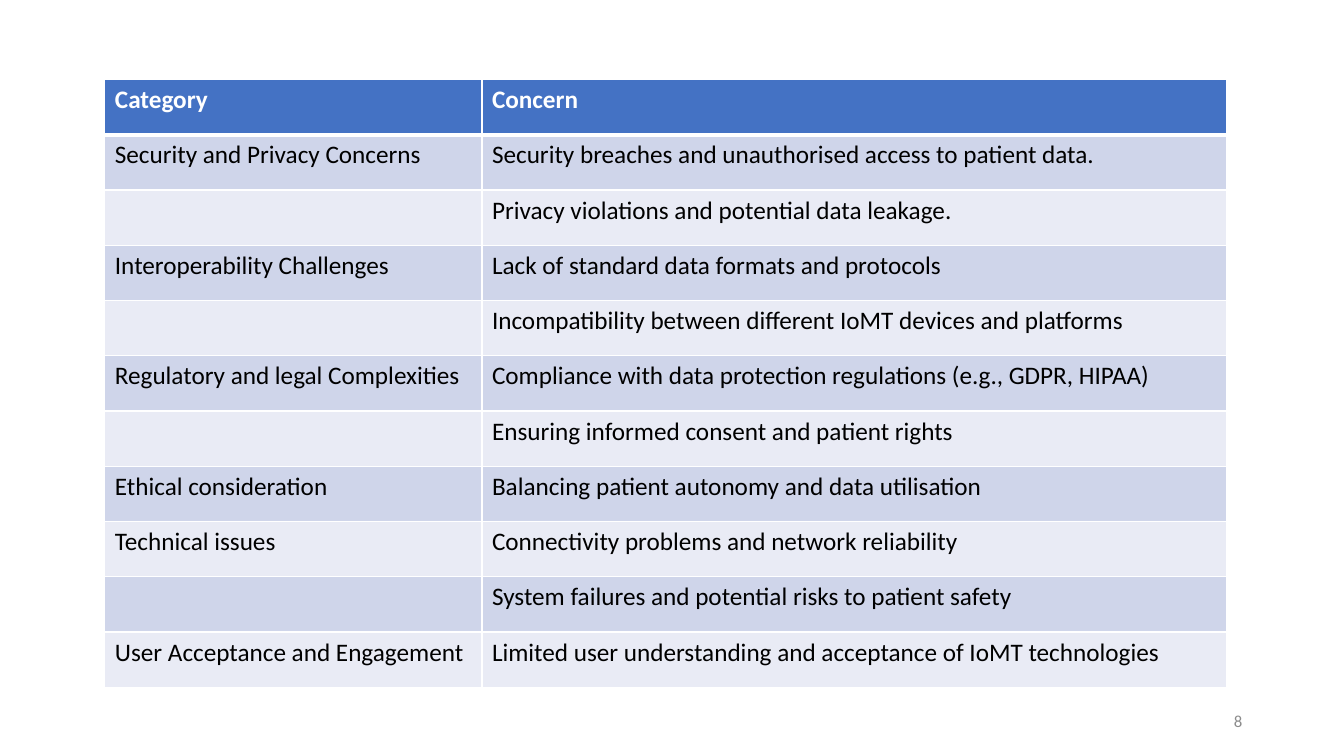
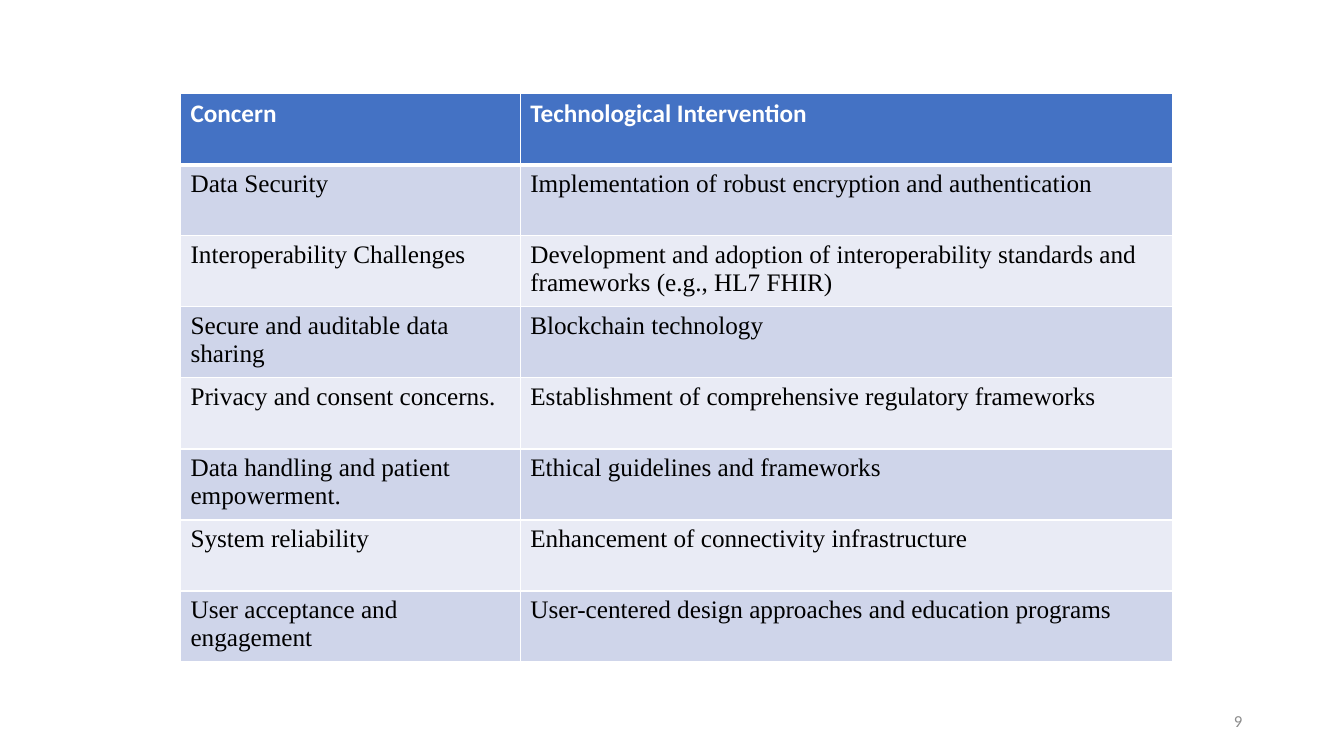
from lxml import etree
from pptx import Presentation
from pptx import util as u
from pptx.dml import color
from pptx.enum import text
from pptx.oxml import ns

SLIDE_WIDTH, SLIDE_HEIGHT = u.Inches(13.33), u.Inches(7.5)
HEADING_FONT = "Calibri"
WHITE, BLACK, GREY = "FFFFFF", "000000", "8C8C8C"
HEADER_FILL = "4472C4"
BAND_FILLS = ("E9EBF5", "CFD5EA")

CONCERNS = [
    ("Category", "Concern"),
    ("Security and Privacy Concerns", "Security breaches and unauthorised access to patient data."),
    ("", "Privacy violations and potential data leakage."),
    ("Interoperability Challenges", "Lack of standard data formats and protocols"),
    ("", "Incompatibility between different IoMT devices and platforms"),
    ("Regulatory and legal Complexities", "Compliance with data protection regulations (e.g., GDPR, HIPAA)"),
    ("", "Ensuring informed consent and patient rights"),
    ("Ethical consideration", "Balancing patient autonomy and data utilisation"),
    ("Technical issues", "Connectivity problems and network reliability"),
    ("", "System failures and potential risks to patient safety"),
    ("User Acceptance and Engagement", "Limited user understanding and acceptance of IoMT technologies"),
]
INTERVENTIONS = [
    ("Concern", "Technological Intervention"),
    ("Data Security", "Implementation of robust encryption and authentication"),
    ("Interoperability Challenges",
     "Development and adoption of interoperability standards and frameworks (e.g., HL7 FHIR)"),
    ("Secure and auditable data sharing", "Blockchain technology"),
    ("Privacy and consent concerns.", "Establishment of comprehensive regulatory frameworks"),
    ("Data handling and patient empowerment.", "Ethical guidelines and frameworks"),
    ("System reliability", "Enhancement of connectivity infrastructure"),
    ("User acceptance and engagement", "User-centered design approaches and education programs"),
]


def across(percent):
    return u.Emu(int(SLIDE_WIDTH * percent / 100))


def down(percent):
    return u.Emu(int(SLIDE_HEIGHT * percent / 100))


def rgb(value):
    return color.RGBColor.from_string(value)


def set_font(para, name, size, fill, bold=False):
    para.font.name = name
    para.font.size = u.Pt(size)
    para.font.bold = bold
    para.font.color.rgb = rgb(fill)


def add_borders(cell, bottom):
    properties = cell._tc.get_or_add_tcPr()
    for side, points in (("L", 1), ("R", 1), ("T", 1), ("B", bottom)):
        line = etree.SubElement(properties, ns.qn(f"a:ln{side}"), w=str(u.Pt(points)))
        fill = etree.SubElement(line, ns.qn("a:solidFill"))
        etree.SubElement(fill, ns.qn("a:srgbClr"), val=WHITE)


def fill_cell(cell, words, row, body_font):
    is_header = row == 0
    add_borders(cell, bottom=3 if is_header else 1)
    cell.fill.solid()
    cell.fill.fore_color.rgb = rgb(HEADER_FILL if is_header else BAND_FILLS[row % 2])
    para = cell.text_frame.paragraphs[0]
    para.text = words
    if is_header:
        set_font(para, HEADING_FONT, 18, WHITE, bold=True)
    else:
        set_font(para, body_font, 18, BLACK)


def add_banded_table(page, rows, left, top, columns, height, body_font):
    frame = page.shapes.add_table(len(rows), len(columns), across(left), down(top),
                                  across(sum(columns)), down(height))
    table = frame.table
    for column, width in zip(table.columns, columns):
        column.width = across(width)
    for row, entries in enumerate(rows):
        for column, words in enumerate(entries):
            fill_cell(table.cell(row, column), words, row, body_font)


def add_page_number(page, number):
    box = page.shapes.add_textbox(across(70.67), down(92.67), across(22.5), down(5.33))
    frame = box.text_frame
    frame.word_wrap = True
    frame.vertical_anchor = text.MSO_ANCHOR.MIDDLE
    para = frame.paragraphs[0]
    para.text = str(number)
    para.alignment = text.PP_ALIGN.RIGHT
    set_font(para, HEADING_FONT, 12, GREY)


def add_page(deck, number):
    page = deck.slides.add_slide(deck.slide_layouts[6])
    add_page_number(page, number)
    return page


def main():
    deck = Presentation()
    deck.slide_width, deck.slide_height = SLIDE_WIDTH, SLIDE_HEIGHT
    add_banded_table(add_page(deck, 8), CONCERNS, left=7.8, top=10.53,
                     columns=(28.06, 55.39), height=80.4, body_font="Calibri")
    add_banded_table(add_page(deck, 9), INTERVENTIONS, left=13.43, top=12.4,
                     columns=(25.28, 48.54), height=75.2, body_font="Times New Roman")
    deck.save("out.pptx")


if __name__ == "__main__":
    main()
